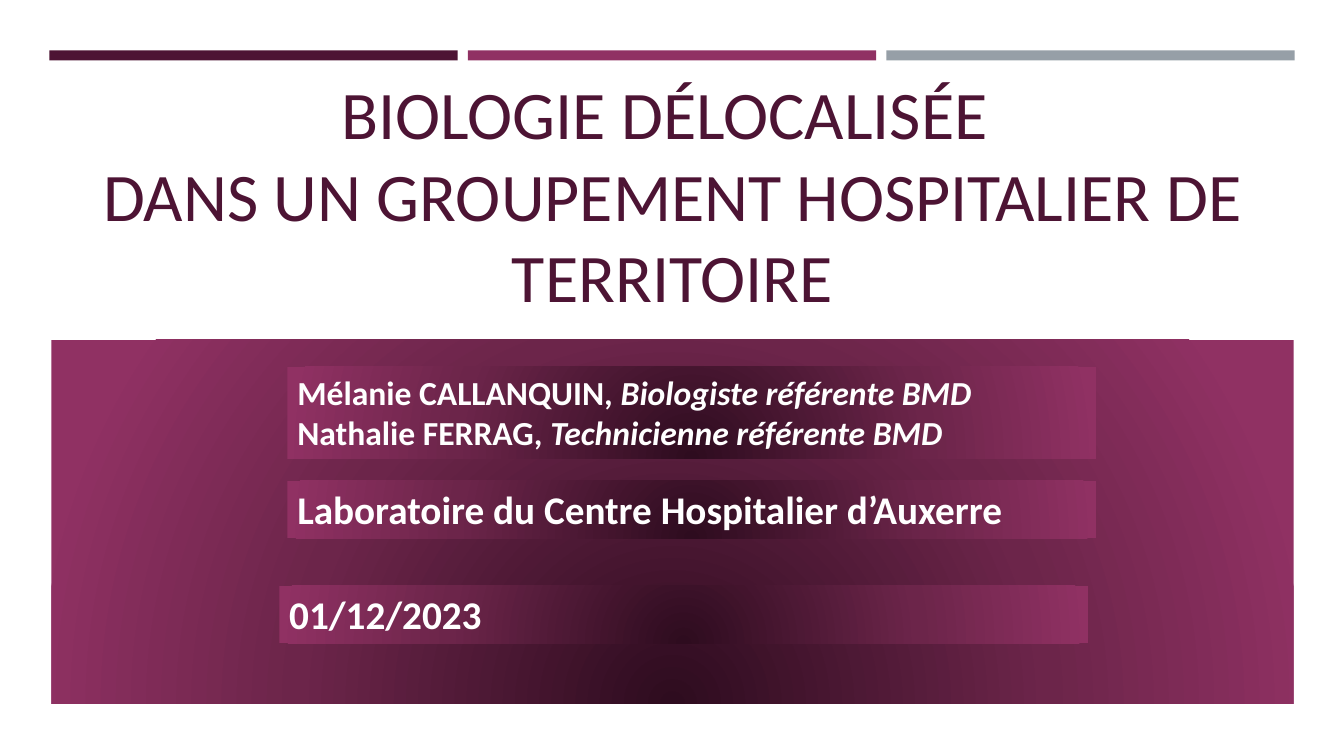
from dataclasses import dataclass

from lxml.etree import SubElement
from pptx import Presentation
from pptx.dml.color import RGBColor
from pptx.enum.shapes import MSO_SHAPE
from pptx.enum.text import MSO_ANCHOR, MSO_AUTO_SIZE, PP_ALIGN
from pptx.oxml.ns import qn
from pptx.util import Inches, Pt


@dataclass(frozen=True)
class Theme:
    font: str = "Calibri"
    plum: str = "4D1434"
    magenta: str = "903163"
    grey: str = "969FA7"
    white: str = "FFFFFF"
    gradient: tuple = ((0, "2E0C1F"), (58, "6C254A"), (100, "903163"))
    title_size: float = 48.6
    author_size: int = 24
    detail_size: int = 28


class TitleSlide:
    def __init__(self, presentation, theme):
        self.theme = theme
        self.slide = presentation.slides.add_slide(presentation.slide_layouts[5])

    def style(self, font, size, color, bold=False):
        font.name = self.theme.font
        font.size = Pt(size)
        font.bold = bold
        font.color.rgb = RGBColor.from_string(color)

    def rectangle(self, left, top, width, height):
        shape = self.slide.shapes.add_shape(
            MSO_SHAPE.RECTANGLE, Inches(left), Inches(top), Inches(width), Inches(height))
        shape.shadow.inherit = False
        shape.line.fill.background()
        return shape

    def bar(self, left, top, width, height, color):
        shape = self.rectangle(left, top, width, height)
        shape.fill.solid()
        shape.fill.fore_color.rgb = RGBColor.from_string(color)

    def panel(self, left, top, width, height):
        """Add a rectangle with a circular gradient centred below its lower edge."""
        shape = self.rectangle(left, top, width, height)
        shape.fill.gradient()
        gradient = shape._element.spPr.find(qn("a:gradFill"))
        for child in list(gradient):
            gradient.remove(child)
        stops = SubElement(gradient, qn("a:gsLst"))
        for position, color in self.theme.gradient:
            stop = SubElement(stops, qn("a:gs"), pos=str(position * 1000))
            SubElement(stop, qn("a:srgbClr"), val=color)
        circle = SubElement(gradient, qn("a:path"), path="circle")
        SubElement(circle, qn("a:fillToRect"), l="50000", t="130000", r="50000", b="-30000")
        return shape

    def caption(self, left, top, width, height, lines, size):
        """Add a panel with lines made of a plain part and an italic part."""
        frame = self.panel(left, top, width, height).text_frame
        frame.word_wrap = True
        frame.auto_size = MSO_AUTO_SIZE.SHAPE_TO_FIT_TEXT
        frame.vertical_anchor = MSO_ANCHOR.TOP
        for index, (plain, italic) in enumerate(lines):
            paragraph = frame.paragraphs[0] if index == 0 else frame.add_paragraph()
            paragraph.alignment = PP_ALIGN.LEFT
            self.style(paragraph.font, size, self.theme.white, bold=True)
            paragraph.add_run().text = plain
            if italic:
                run = paragraph.add_run()
                run.text = italic
                run.font.italic = True

    def title(self, left, top, width, height, text):
        shape = self.slide.shapes.title
        shape.left, shape.top = Inches(left), Inches(top)
        shape.width, shape.height = Inches(width), Inches(height)
        frame = shape.text_frame
        frame.text = text
        frame.word_wrap = True
        frame.auto_size = MSO_AUTO_SIZE.NONE
        frame.vertical_anchor = MSO_ANCHOR.MIDDLE
        paragraph = frame.paragraphs[0]
        paragraph.alignment = PP_ALIGN.CENTER
        self.style(paragraph.font, self.theme.title_size, self.theme.plum)


def main():
    presentation = Presentation()
    presentation.slide_width = Inches(13.33)
    presentation.slide_height = Inches(7.5)
    theme = Theme()
    cover = TitleSlide(presentation, theme)

    for index, color in enumerate((theme.plum, theme.magenta, theme.grey)):
        cover.bar(0.49 + index * 4.15, 0.5, 4.05, 0.1, color)
    cover.title(0.66, 1.12, 12.02, 1.61,
                "BIOLOGIE DÉLOCALISÉE \vDANS UN GROUPEMENT HOSPITALIER DE TERRITOIRE")

    cover.panel(0.51, 3.37, 12.32, 3.61)
    authors = (("Mélanie CALLANQUIN, ", "Biologiste référente BMD"),
               ("Nathalie FERRAG, ", "Technicienne référente BMD"))
    cover.caption(2.85, 3.64, 8.02, 0.91, authors, theme.author_size)
    laboratory = (("Laboratoire du Centre Hospitalier d’Auxerre", ""),)
    cover.caption(2.85, 4.77, 8.02, 0.57, laboratory, theme.detail_size)
    cover.caption(2.77, 5.81, 8.02, 0.57, (("01/12/2023", ""),), theme.detail_size)

    presentation.save("out.pptx")


if __name__ == "__main__":
    main()
